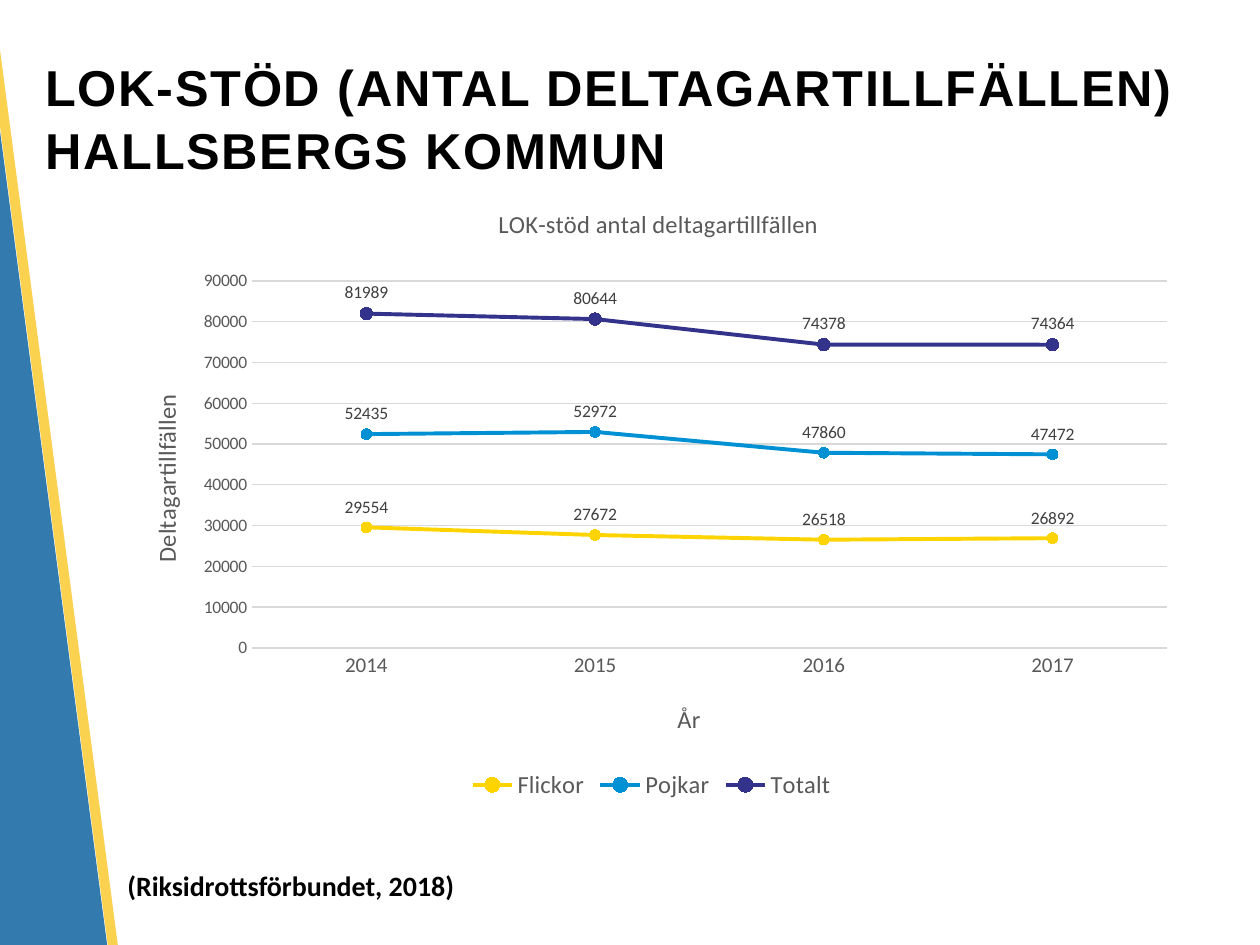
from dataclasses import dataclass

from lxml.etree import SubElement
from pptx import Presentation
from pptx.chart.data import CategoryChartData
from pptx.dml.color import RGBColor
from pptx.enum.chart import XL_CHART_TYPE as ChartType
from pptx.enum.chart import XL_LABEL_POSITION as LabelPos
from pptx.enum.chart import XL_LEGEND_POSITION as LegendPos
from pptx.enum.chart import XL_MARKER_STYLE as Marker
from pptx.enum.chart import XL_TICK_MARK as Tick
from pptx.enum.shapes import MSO_SHAPE as Shape
from pptx.enum.text import MSO_ANCHOR as Anchor
from pptx.oxml import parse_xml
from pptx.oxml.ns import nsdecls, qn
from pptx.util import Emu, Pt

BLUE = RGBColor(0x00, 0x5B, 0x9C)
GOLD = RGBColor(0xFA, 0xC8, 0x28)
BLACK = RGBColor(0x00, 0x00, 0x00)
GRAY = RGBColor(0x59, 0x59, 0x59)
DARK = RGBColor(0x40, 0x40, 0x40)
RULE = RGBColor(0xD9, 0xD9, 0xD9)
YELLOW = RGBColor(0xFD, 0xD4, 0x00)
SKY = RGBColor(0x00, 0x90, 0xD4)
INDIGO = RGBColor(0x33, 0x33, 0x8B)
PX = 914400 // 126


@dataclass
class Box:
    x: int
    y: int
    w: int
    h: int

    def emu(self) -> tuple:
        return tuple(Emu(v * PX) for v in (self.x, self.y, self.w, self.h))


@dataclass
class Stripe:
    box: Box
    color: RGBColor
    alpha: int


@dataclass
class Line:
    name: str
    values: tuple
    color: RGBColor
    marker: int


STRIPES = (
    Stripe(Box(-66, -207, 115, 1427), BLUE, 80),
    Stripe(Box(48, -223, 10, 1426), GOLD, 81),
)
YEARS = ("2014", "2015", "2016", "2017")
LINES = (
    Line("Flickor", (29554, 27672, 26518, 26892), YELLOW, 6),
    Line("Pojkar", (52435, 52972, 47860, 47472), SKY, 6),
    Line("Totalt", (81989, 80644, 74378, 74364), INDIGO, 7),
)
CHART = Box(115, 195, 1073, 610)
PLOT = Box(252, 281, 915, 367)


def style(font, size: float, color: RGBColor, name="Calibri", bold=False) -> None:
    font.name, font.size, font.bold = name, Pt(size), bold
    font.color.rgb = color


def draw_stripe(shapes, stripe: Stripe) -> None:
    sp = shapes.add_shape(Shape.RECTANGLE, *stripe.box.emu())
    sp.rotation = 352.5
    sp.shadow.inherit = False
    sp.line.fill.background()
    sp.fill.solid()
    sp.fill.fore_color.rgb = stripe.color
    clr = sp.element.spPr.find(f".//{qn('a:srgbClr')}")
    SubElement(clr, qn("a:alpha"), val=str(stripe.alpha * 1000))


def draw_text(shapes, box: Box, text: str, size: float, name: str, wrap: bool):
    tf = shapes.add_textbox(*box.emu()).text_frame
    tf.word_wrap = wrap
    tf.text = text
    p = tf.paragraphs[0]
    style(p.runs[0].font, size, BLACK, name, True)
    return tf


def place(parent, index: int, x: int, y: int, plot: Box = None) -> None:
    for old in parent.findall(qn("c:layout")):
        parent.remove(old)
    values = [("xMode", "edge"), ("yMode", "edge"),
              ("x", (x - CHART.x) / CHART.w), ("y", (y - CHART.y) / CHART.h)]
    if plot:
        values.insert(0, ("layoutTarget", "inner"))
        values += [("w", plot.w / CHART.w), ("h", plot.h / CHART.h)]
    body = "".join(f'<c:{k} val="{v}"/>' for k, v in values)
    parent.insert(index, parse_xml(
        f"<c:layout {nsdecls('c')}><c:manualLayout>{body}</c:manualLayout></c:layout>"))


def set_title(title, text: str, x: int, y: int) -> None:
    p = title.text_frame.paragraphs[0]
    p.text = text
    style(p.runs[0].font, 14, GRAY)
    place(title.element, 1, x, y)


def style_axis(axis, size: int) -> None:
    axis.major_tick_mark = axis.minor_tick_mark = Tick.NONE
    style(axis.tick_labels.font, size, GRAY)


def style_series(series, line: Line) -> None:
    series.smooth = False
    series.format.line.width = Pt(2.25)
    series.format.line.color.rgb = line.color
    series.marker.style, series.marker.size = Marker.CIRCLE, line.marker
    fmt = series.marker.format
    fmt.fill.solid()
    fmt.fill.fore_color.rgb = fmt.line.color.rgb = line.color
    labels = series.data_labels
    labels.show_value, labels.position = True, LabelPos.ABOVE
    style(labels.font, 10, DARK)


def draw_chart(shapes) -> None:
    data = CategoryChartData(number_format="0")
    data.categories = YEARS
    for line in LINES:
        data.add_series(line.name, line.values)
    chart = shapes.add_chart(ChartType.LINE_MARKERS, *CHART.emu(), data).chart
    style(chart.font, 10, BLACK)
    chart.plots[0].vary_by_categories = False
    place(chart.element.find(f".//{qn('c:plotArea')}"), 0, PLOT.x, PLOT.y, PLOT)

    cat, val = chart.category_axis, chart.value_axis
    style_axis(cat, 12)
    style_axis(val, 10)
    cat.format.line.color.rgb = RULE
    cat.format.line.width = Pt(0.75)
    val.minimum_scale, val.maximum_scale, val.major_unit = 0, 90000, 10000
    val.format.line.fill.background()
    val.major_gridlines.format.line.color.rgb = RULE
    val.major_gridlines.format.line.width = Pt(0.75)

    chart.has_title = True
    set_title(chart.chart_title, "LOK-stöd antal deltagartillfällen", 494, 203)
    set_title(cat.axis_title, "År", 673, 698)
    set_title(val.axis_title, "Deltagartillfällen", 145, 390)

    chart.has_legend = True
    chart.legend.position = LegendPos.BOTTOM
    chart.legend.include_in_layout = False
    style(chart.legend.font, 14, GRAY)
    for series, line in zip(chart.plots[0].series, LINES):
        style_series(series, line)


def main() -> None:
    prs = Presentation()
    prs.slide_width, prs.slide_height = Emu(1260 * PX), Emu(945 * PX)
    shapes = prs.slides.add_slide(prs.slide_layouts[6]).shapes
    for stripe in STRIPES:
        draw_stripe(shapes, stripe)
    tf = draw_text(shapes, Box(33, 38, 1177, 158),
                   "LOK-STÖD (ANTAL DELTAGARTILLFÄLLEN) HALLSBERGS KOMMUN",
                   28.8, "Arial", True)
    tf.vertical_anchor = Anchor.MIDDLE
    p = tf.paragraphs[0]
    p.line_spacing = 1.03
    p.runs[0].font._element.set("spc", "100")
    draw_text(shapes, Box(115, 862, 358, 47), "(Riksidrottsförbundet, 2018)",
              16, "Calibri", False)
    draw_chart(shapes)
    prs.save("out.pptx")


if __name__ == "__main__":
    main()
